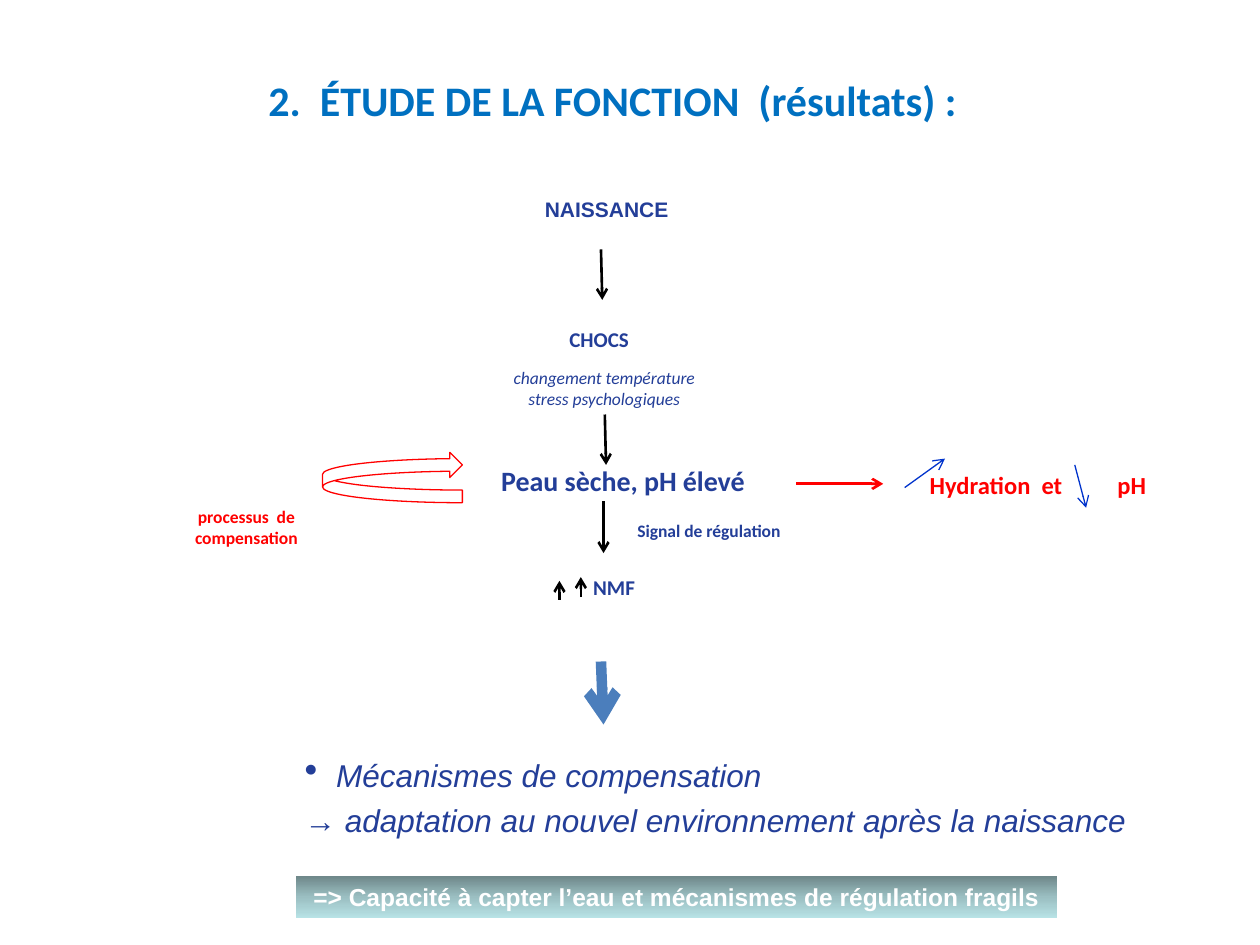
from copy import deepcopy
from dataclasses import dataclass

from lxml import etree
from pptx import Presentation
from pptx.dml.color import RGBColor
from pptx.enum.shapes import MSO_CONNECTOR, MSO_SHAPE
from pptx.enum.text import MSO_ANCHOR, MSO_AUTO_SIZE, PP_ALIGN
from pptx.oxml.ns import qn
from pptx.slide import Slide
from pptx.text.text import TextFrame
from pptx.util import Emu, Pt

LEFT, CENTER = PP_ALIGN.LEFT, PP_ALIGN.CENTER
TOP = MSO_ANCHOR.TOP
GROW = MSO_AUTO_SIZE.SHAPE_TO_FIT_TEXT
STRAIGHT = MSO_CONNECTOR.STRAIGHT
CURVED_ARROW, RECTANGLE = MSO_SHAPE.CURVED_RIGHT_ARROW, MSO_SHAPE.RECTANGLE

PX_PER_INCH = 100
SCALE = 914400 // PX_PER_INCH
COLORS = {
    "title": "0070C0",
    "navy": "233E98",
    "red": "FF0000",
    "blue": "0033CC",
    "steel": "4B7EBC",
    "black": "000000",
    "white": "FFFFFF",
}
BAR_STOPS = {0: "6D8688", 0.5: "9BBFC2", 1: "B8E3E6"}


@dataclass(frozen=True)
class Label:
    lines: tuple[str, ...]
    at: tuple[int, int, int, int]
    size: int
    color: str = "navy"
    font: str = "Calibri"
    bold: bool = True
    italic: bool = False
    align: PP_ALIGN = LEFT
    wrap: bool = False
    gap: int = 0


@dataclass(frozen=True)
class Arrow:
    start: tuple[int, int]
    end: tuple[int, int]
    color: str = "black"
    width: float = 1.5


TITLE = Label(("2.  ÉTUDE DE LA FONCTION  (résultats) :",), (203, 54, 573, 50), 24, "title")
HYDRATION = Label(("Hydration  et\tpH",), (716, 368, 210, 34), 14, "red", wrap=True)
CONCLUSION = Label(
    ("Mécanismes de compensation", "→ adaptation au nouvel environnement après la naissance"),
    (132, 595, 933, 77), 18, font="Arial", bold=False, italic=True, wrap=True, gap=4,
)
BAR = Label(
    ("=> Capacité à capter l’eau et mécanismes de régulation fragils",),
    (235, 695, 604, 34), 14, "white", "Arial", align=CENTER,
)
LABELS = (
    Label(("NAISSANCE",), (422, 151, 119, 30), 12, font="Arial", align=CENTER),
    Label(("CHOCS",), (442, 254, 68, 30), 12),
    Label(("changement température", "stress psychologiques"), (395, 286, 169, 44), 10,
          bold=False, italic=True, align=CENTER),
    Label(("Peau sèche, pH élevé",), (388, 363, 217, 37), 16),
    Label(("Signal de régulation",), (496, 408, 136, 27), 10),
    Label(("NMF",), (461, 451, 54, 30), 12),
    Label(("processus  de", "compensation"), (143, 397, 105, 44), 10, "red", align=CENTER),
)
ARROWS = (
    Arrow((477, 198), (478, 238)),
    Arrow((480, 329), (481, 369)),
    Arrow((479, 398), (479, 439)),
    Arrow((444, 476), (444, 461)),
    Arrow((461, 474), (461, 458)),
    Arrow((632, 384), (701, 384), "red"),
    Arrow((718, 387), (750, 364), "blue", 0.75),
    Arrow((853, 369), (862, 403), "blue", 0.75),
    Arrow((477, 525), (479, 575), "steel", 6),
)


def px(value: int) -> Emu:
    return Emu(value * SCALE)


def rgb(name: str) -> RGBColor:
    return RGBColor.from_string(COLORS[name])


def apply(target: object, values: dict) -> None:
    for name, value in values.items():
        setattr(target, name, value)


def write(frame: TextFrame, label: Label) -> None:
    apply(frame, {"word_wrap": label.wrap, "auto_size": GROW, "vertical_anchor": TOP})
    for index, line in enumerate(label.lines):
        para = frame.add_paragraph() if index else frame.paragraphs[0]
        apply(para, {"alignment": label.align, "space_before": Pt(label.gap)})
        span = para.add_run()
        span.text = line
        apply(span.font, {"name": label.font, "size": Pt(label.size),
                          "bold": label.bold, "italic": label.italic})
        span.font.color.rgb = rgb(label.color)


def add_label(page: Slide, label: Label) -> TextFrame:
    box = page.shapes.add_textbox(*map(px, label.at))
    write(box.text_frame, label)
    return box.text_frame


def add_arrow(page: Slide, arrow: Arrow) -> None:
    connector = page.shapes.add_connector(STRAIGHT, *map(px, arrow.start + arrow.end))
    connector.line.color.rgb = rgb(arrow.color)
    connector.line.width = Pt(arrow.width)
    etree.SubElement(connector.line._get_or_add_ln(), qn("a:tailEnd"), type="arrow")
    etree.SubElement(connector._element.spPr, qn("a:effectLst"))


def add_title(page: Slide, label: Label) -> None:
    title = page.shapes.title
    apply(title, dict(zip(("left", "top", "width", "height"), map(px, label.at))))
    write(title.text_frame, label)


def add_hydration(page: Slide) -> None:
    para = add_label(page, HYDRATION).paragraphs[0]
    properties = para._p.get_or_add_pPr()
    properties.set("marL", str(px(12)))
    tabs = etree.SubElement(properties, qn("a:tabLst"))
    etree.SubElement(tabs, qn("a:tab"), pos=str(px(149)), algn="l")


def add_conclusion(page: Slide) -> None:
    frame = add_label(page, CONCLUSION)
    for para, margin, indent in zip(frame.paragraphs, (125, 100), (-25, 0)):
        properties = para._p.get_or_add_pPr()
        properties.set("marL", str(px(margin)))
        properties.set("indent", str(px(indent)))
    bulleted = frame.paragraphs[0]._p.get_or_add_pPr()
    bullet_color = etree.SubElement(bulleted, qn("a:buClr"))
    etree.SubElement(bullet_color, qn("a:srgbClr"), val=COLORS["navy"])
    etree.SubElement(bulleted, qn("a:buSzPct"), val="120000")
    etree.SubElement(bulleted, qn("a:buChar"), char="•")


def add_compensation_loop(page: Slide) -> None:
    loop = page.shapes.add_shape(CURVED_ARROW, *map(px, (256, 359, 111, 40)))
    loop.shadow.inherit = False
    loop.fill.background()
    loop.line.color.rgb = rgb("red")
    loop.line.width = Pt(0.75)
    for index, value in enumerate((0.25, 0.5, 0.25)):
        loop.adjustments[index] = value
    loop._element.spPr.find(qn("a:xfrm")).set("flipV", "1")


def add_bar(page: Slide) -> None:
    bar = page.shapes.add_shape(RECTANGLE, *map(px, BAR.at))
    bar.shadow.inherit = False
    bar.line.fill.background()
    bar.fill.gradient()
    bar.fill.gradient_angle = 270
    stop_list = next(bar._element.spPr.iter(qn("a:gsLst")))
    stop_list.append(deepcopy(stop_list[0]))
    for stop, (position, color) in zip(bar.fill.gradient_stops, BAR_STOPS.items()):
        stop.position = position
        stop.color.rgb = RGBColor.from_string(color)
    write(bar.text_frame, BAR)


def main() -> None:
    deck = Presentation()
    apply(deck, {"slide_width": px(1000), "slide_height": px(750)})
    page = deck.slides.add_slide(deck.slide_layouts[5])
    add_title(page, TITLE)
    for label in LABELS:
        add_label(page, label)
    add_compensation_loop(page)
    add_hydration(page)
    for arrow in ARROWS:
        add_arrow(page, arrow)
    add_bar(page)
    add_conclusion(page)
    deck.save("out.pptx")


if __name__ == "__main__":
    main()
